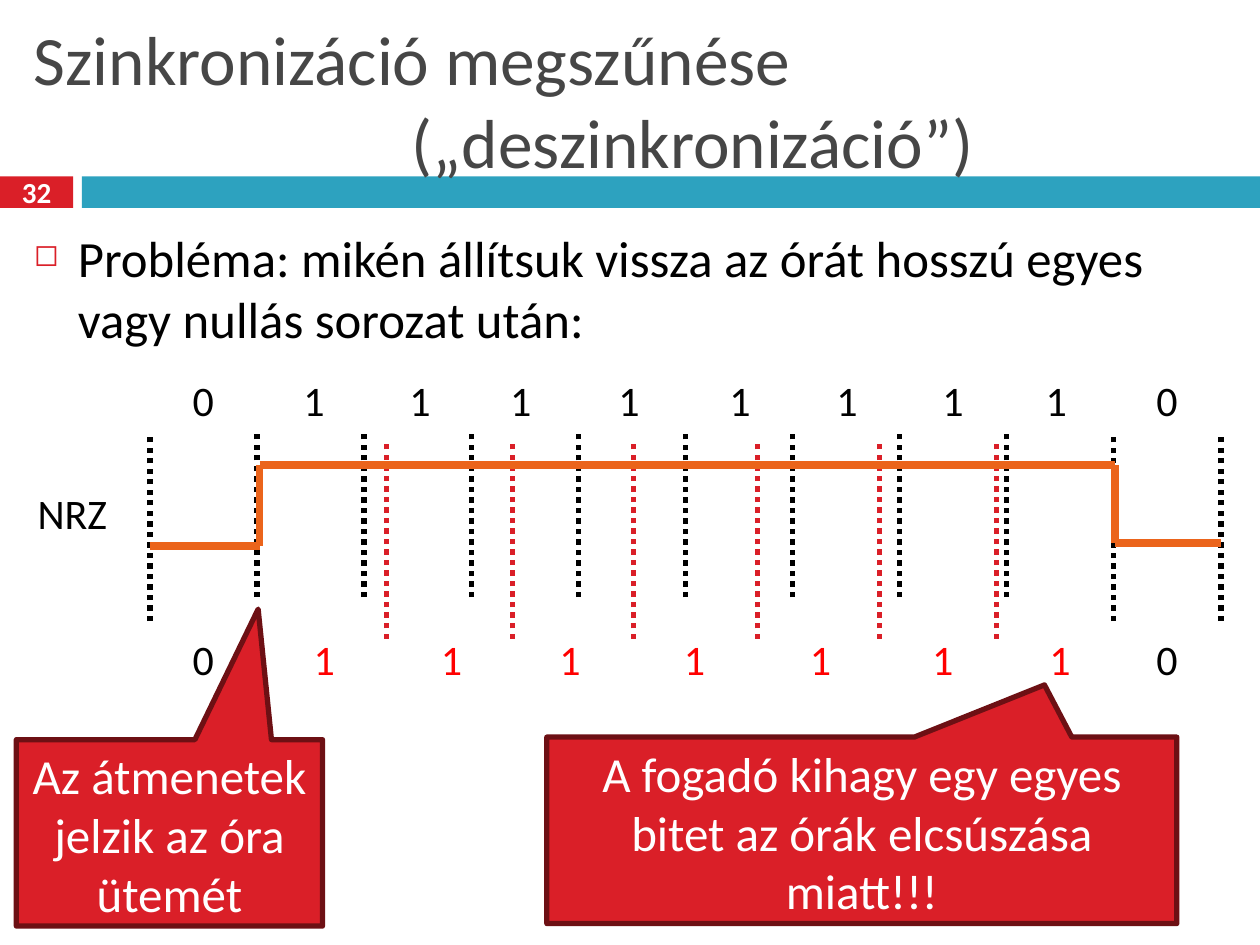
from dataclasses import dataclass
from typing import NamedTuple

from lxml import etree
from pptx import Presentation
from pptx.dml.color import RGBColor
from pptx.enum.dml import MSO_LINE
from pptx.enum.shapes import MSO_CONNECTOR, MSO_SHAPE
from pptx.enum.text import MSO_ANCHOR, PP_ALIGN
from pptx.oxml.ns import qn
from pptx.util import Inches, Pt

DOTTED = MSO_LINE.ROUND_DOT
STRAIGHT = MSO_CONNECTOR.STRAIGHT
RECTANGLE = MSO_SHAPE.RECTANGLE
CALLOUT = MSO_SHAPE.RECTANGULAR_CALLOUT
TOP, MIDDLE = MSO_ANCHOR.TOP, MSO_ANCHOR.MIDDLE
LEFT, CENTER = PP_ALIGN.LEFT, PP_ALIGN.CENTER


@dataclass(frozen=True)
class Theme:
    font: str = "Calibri"
    red: str = "DA1F28"
    dark_red: str = "6D1014"
    bright_red: str = "FF0000"
    teal: str = "2DA2BF"
    orange: str = "EB641B"
    grey: str = "464646"
    black: str = "000000"
    white: str = "FFFFFF"
    title: float = 39.6
    body: float = 29
    callout: float = 28
    label: float = 24
    number: float = 16.6
    dotted_width: float = 3
    signal_width: float = 4.5


class Box(NamedTuple):
    left: float
    top: float
    width: float
    height: float

    def lengths(self):
        return [Inches(value) for value in self]


THEME = Theme()


def set_values(target, values):
    for name, value in values.items():
        setattr(target, name, value)


def write(para, text, size, color, bold=False):
    span = para.add_run()
    span.text = text
    set_values(span.font, {"name": THEME.font, "size": Pt(size), "bold": bold})
    span.font.color.rgb = RGBColor.from_string(color)


def add_text(page, box, text, size, color, wrap=True):
    frame = page.shapes.add_textbox(*box.lengths()).text_frame
    frame.word_wrap = wrap
    para = frame.paragraphs[0]
    write(para, text, size, color)
    return frame


def add_block(page, box, kind, fill):
    shape = page.shapes.add_shape(kind, *box.lengths())
    shape.shadow.inherit = False
    shape.fill.solid()
    shape.fill.fore_color.rgb = RGBColor.from_string(fill)
    shape.line.fill.background()
    return shape


def add_line(page, start, end, color, width, dash=None):
    ends = [Inches(value) for value in (*start, *end)]
    line = page.shapes.add_connector(STRAIGHT, *ends)
    line.line.color.rgb = RGBColor.from_string(color)
    set_values(line.line, {"width": Pt(width), "dash_style": dash})
    etree.SubElement(line._element.spPr, qn("a:effectLst"))


def add_number_bar(page, box, number):
    number_width, gap = 0.58, 0.07
    badge = add_block(page, box._replace(width=number_width), RECTANGLE, THEME.red)
    badge.text_frame.vertical_anchor = MIDDLE
    para = badge.text_frame.paragraphs[0]
    para.alignment = CENTER
    write(para, number, THEME.number, THEME.white, bold=True)
    offset = number_width + gap
    bar = box._replace(left=box.left + offset, width=box.width - offset)
    add_block(page, bar, RECTANGLE, THEME.teal)


def add_title(page, box, first, second):
    frame = add_text(page, box, first, THEME.title, THEME.grey)
    frame.vertical_anchor = MIDDLE
    para = frame.add_paragraph()
    para._p.get_or_add_pPr().set("marL", str(Inches(3)))
    write(para, second, THEME.title, THEME.grey)


def add_body(page, box, text):
    frame = add_text(page, box, text, THEME.body, THEME.black)
    para = frame.paragraphs[0]
    para.space_before = Pt(7)
    properties = para._p.get_or_add_pPr()
    properties.set("marL", str(Inches(0.35)))
    properties.set("indent", str(Inches(-0.35)))
    color = etree.SubElement(properties, qn("a:buClr"))
    etree.SubElement(color, qn("a:srgbClr")).set("val", THEME.red)
    etree.SubElement(properties, qn("a:buSzPct")).set("val", "60000")
    etree.SubElement(properties, qn("a:buChar")).set("char", "◻")


def add_bits(page, box, bits, offsets, middle_color):
    last = len(bits) - 1
    for index, (bit, offset) in enumerate(zip(bits, offsets)):
        color = THEME.black if index in (0, last) else middle_color
        cell = Box(box.left + offset, box.top, 0.39, box.height)
        add_text(page, cell, bit, THEME.label, color, wrap=False)


def add_signal_diagram(page, box):
    left, top = box.left, box.top
    receiver_ticks = (1.88, 2.88, 3.84, 4.82, 5.79, 6.72)
    sent_offsets = (0.24, 1.12, 1.96, 2.76, 3.62, 4.5, 5.35, 6.19, 7.01, 7.89)
    received_offsets = (0.24, 1.2, 2.21, 3.15, 4.14, 5.14, 6.11, 7.04, 7.89)
    signal = ((0, 1.41), (0.87, 1.41), (0.87, 0.77),
              (7.66, 0.77), (7.66, 1.39), (8.5, 1.39))
    bit_count = len(sent_offsets)

    for tick in receiver_ticks:
        add_line(page, (left + tick, top + 2.15), (left + tick, top + 0.6),
                 THEME.red, THEME.dotted_width, DOTTED)
    for index in range(bit_count + 1):
        across = left + index * box.width / bit_count
        depth = 2.01 if index in (0, bit_count - 1, bit_count) else 1.82
        add_line(page, (across, top + depth), (across, top + 0.51),
                 THEME.black, THEME.dotted_width, DOTTED)

    points = [(left + across, top + down) for across, down in signal]
    for start, end in zip(points, points[1:]):
        add_line(page, start, end, THEME.orange, THEME.signal_width)

    row = box._replace(height=0.5)
    add_bits(page, row, "0111111110", sent_offsets, THEME.black)
    lower_row = row._replace(top=top + box.height - row.height)
    add_bits(page, lower_row, "011111110", received_offsets, THEME.bright_red)


def add_callout(page, box, text, tip):
    shape = add_block(page, box, CALLOUT, THEME.red)
    shape.line.color.rgb = RGBColor.from_string(THEME.dark_red)
    shape.line.width = Pt(3)
    shape.adjustments[0], shape.adjustments[1] = tip
    set_values(shape.text_frame, {"word_wrap": True, "vertical_anchor": TOP})
    para = shape.text_frame.paragraphs[0]
    para.alignment = CENTER
    write(para, text, THEME.callout, THEME.white)


def main():
    deck = Presentation()
    set_values(deck, {"slide_width": Inches(10), "slide_height": Inches(7.5)})
    page = deck.slides.add_slide(deck.slide_layouts[6])
    add_number_bar(page, Box(0, 1.4, 10, 0.25), "32")
    add_title(page, Box(0.17, 0.25, 9.67, 1.08),
              "Szinkronizáció megszűnése", "(„deszinkronizáció”)")
    add_body(page, Box(0.17, 1.75, 9.67, 1.1),
             "Probléma: mikén állítsuk vissza az órát hosszú egyes "
             "vagy nullás sorozat után:")
    add_text(page, Box(0.2, 3.82, 0.76, 0.5), "NRZ", THEME.label, THEME.black, wrap=False)
    add_signal_diagram(page, Box(1.19, 2.92, 8.5, 2.56))
    add_callout(page, Box(0.13, 5.87, 2.43, 1.48),
                "Az átmenetek jelzik az óra ütemét", (0.29, -1.2))
    add_callout(page, Box(4.34, 5.85, 5, 1.48),
                "A fogadó kihagy egy egyes bitet az órák elcsúszása miatt!!!",
                (0.29, -0.78))
    deck.save("out.pptx")


if __name__ == "__main__":
    main()
